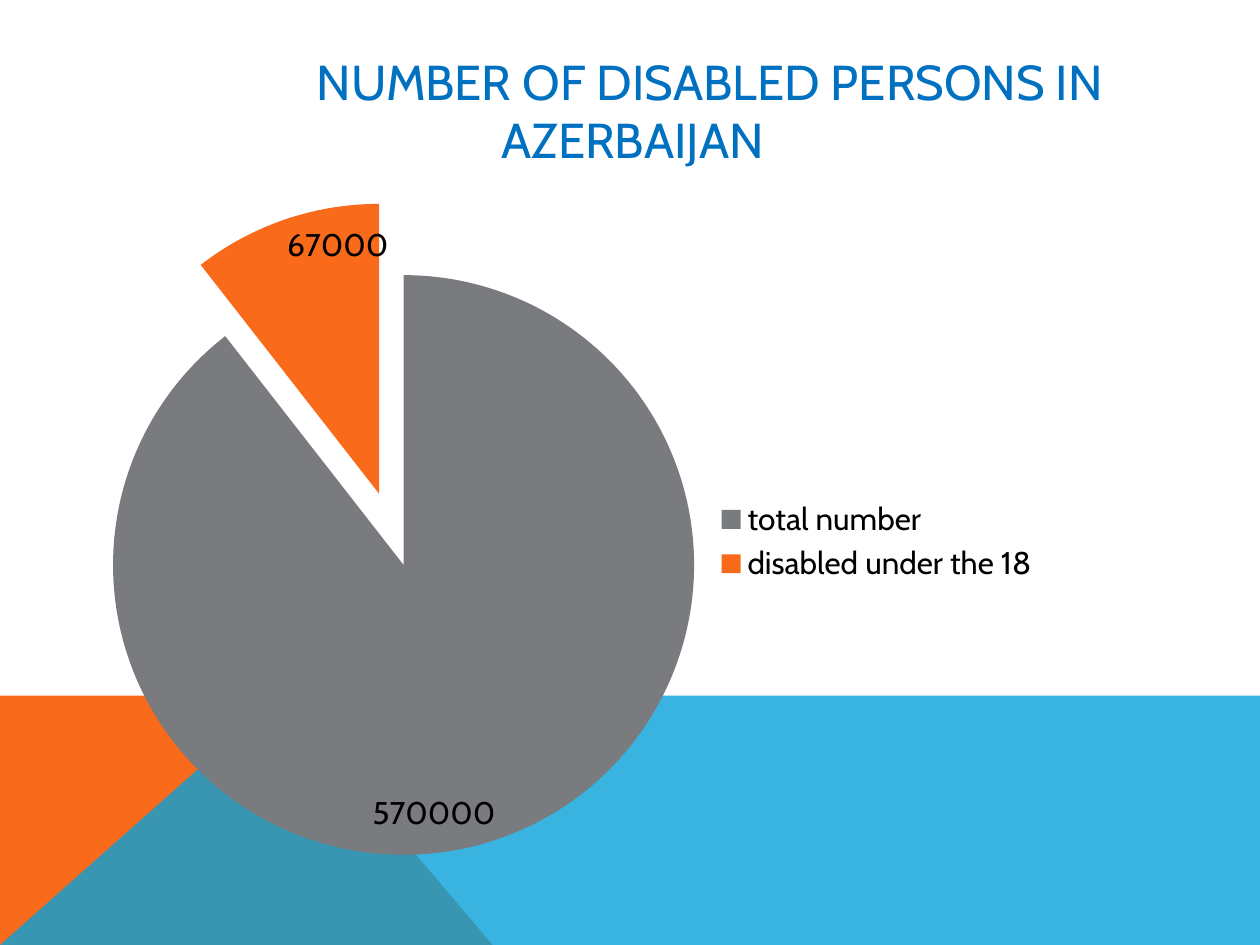
from dataclasses import dataclass

from lxml import etree
from pptx import Presentation
from pptx.chart.data import CategoryChartData
from pptx.dml.color import RGBColor
from pptx.enum.chart import XL_CHART_TYPE, XL_LABEL_POSITION, XL_LEGEND_POSITION
from pptx.enum.text import MSO_ANCHOR, PP_ALIGN
from pptx.oxml.ns import qn
from pptx.util import Pt

PIE = XL_CHART_TYPE.PIE
INSIDE_END = XL_LABEL_POSITION.INSIDE_END
RIGHT = XL_LEGEND_POSITION.RIGHT
CENTER = PP_ALIGN.CENTER
MIDDLE = MSO_ANCHOR.MIDDLE

ORANGE = RGBColor(0xF9, 0x6A, 0x1B)
SKY = RGBColor(0x08, 0xA1, 0xD9)
GREY = RGBColor(0x79, 0x7B, 0x7E)
BLUE = RGBColor(0x00, 0x70, 0xC0)
BLACK = RGBColor(0, 0, 0)

FONT = "Cabin"
PAGE_WIDTH, PAGE_HEIGHT = 720, 540
BAND_TOP = 397.5
PEAK = 160.5
TITLE_INDENT = 88
PLOT_LAYOUT = {"x": 0.03, "y": 0.1, "w": 0.6, "h": 0.87}


@dataclass(frozen=True)
class Band:
    points: tuple[tuple[float, float], ...]
    color: RGBColor
    opacity: int = 100


@dataclass(frozen=True)
class Slice:
    label: str
    value: int
    color: RGBColor
    explosion: int = 0


BANDS = (
    Band(((0, PAGE_HEIGHT), (0, BAND_TOP), (PEAK, BAND_TOP), (281.5, PAGE_HEIGHT)), ORANGE),
    Band(
        ((0, PAGE_HEIGHT), (PEAK, BAND_TOP), (PAGE_WIDTH, BAND_TOP), (PAGE_WIDTH, PAGE_HEIGHT)),
        SKY,
        80,
    ),
)
SLICES = (
    Slice("total number", 570000, GREY),
    Slice("disabled under the 18", 67000, ORANGE, 26),
)


def apply_format(target, values: dict) -> None:
    for name, value in values.items():
        setattr(target, name, value)


def draw_band(page, band: Band) -> None:
    points = [(Pt(x), Pt(y)) for x, y in band.points]
    builder = page.shapes.build_freeform(*points[0], scale=1.0)
    builder.add_line_segments(points[1:], close=True)
    shape = builder.convert_to_shape()
    shape.shadow.inherit = False
    shape.fill.solid()
    shape.fill.fore_color.rgb = band.color
    shape.line.fill.background()
    if band.opacity < 100:
        color = shape.fill._xPr.find(f".//{qn('a:srgbClr')}")
        etree.SubElement(color, qn("a:alpha"), val=str(band.opacity * 1000))


def draw_title(page, text: str) -> None:
    box = page.shapes.add_textbox(Pt(65.5), Pt(26), Pt(592), Pt(73.5))
    apply_format(box.text_frame, {"word_wrap": True, "vertical_anchor": MIDDLE})
    para = box.text_frame.paragraphs[0]
    para.alignment = CENTER
    para._p.get_or_add_pPr().set("indent", str(Pt(TITLE_INDENT)))
    span = para.add_run()
    span.text = text
    apply_format(span.font, {"name": FONT, "size": Pt(28)})
    span.font.color.rgb = BLUE


def place_plot(plot_area) -> None:
    for old in plot_area.findall(qn("c:layout")):
        plot_area.remove(old)
    layout = etree.Element(qn("c:layout"))
    plot_area.insert(0, layout)
    manual = etree.SubElement(layout, qn("c:manualLayout"))
    settings = {"layoutTarget": "inner", "xMode": "edge", "yMode": "edge", **PLOT_LAYOUT}
    for name, value in settings.items():
        etree.SubElement(manual, qn(f"c:{name}"), val=str(value))


def draw_pie(page, slices: tuple[Slice, ...]) -> None:
    data = CategoryChartData()
    data.categories = [item.label for item in slices]
    data.add_series("Series 1", [item.value for item in slices])
    frame = page.shapes.add_chart(PIE, Pt(48), Pt(116.5), Pt(553.5), Pt(385), data)
    chart = frame.chart
    apply_format(chart, {"has_title": False, "has_legend": True})
    apply_format(chart.font, {"name": FONT, "size": Pt(18)})
    chart.font.color.rgb = BLACK
    apply_format(chart.legend, {"position": RIGHT, "include_in_layout": False})

    plot = chart.plots[0]
    apply_format(plot, {"vary_by_categories": True, "has_data_labels": True})
    labels = {"show_value": True, "show_percentage": False, "position": INSIDE_END}
    apply_format(plot.data_labels, labels)
    for index, item in enumerate(slices):
        point = plot.series[0].points[index]
        point.format.fill.solid()
        point.format.fill.fore_color.rgb = item.color
        if item.explosion:
            properties = point.format._element.find(qn("c:spPr")) if hasattr(
                point.format, "_element"
            ) else point.format.fill._xPr
            explosion = etree.Element(qn("c:explosion"), val=str(item.explosion))
            properties.addprevious(explosion)
    place_plot(chart._chartSpace.chart.plotArea)


def main() -> None:
    deck = Presentation()
    apply_format(deck, {"slide_width": Pt(PAGE_WIDTH), "slide_height": Pt(PAGE_HEIGHT)})
    page = deck.slides.add_slide(deck.slide_layouts[6])
    for band in BANDS:
        draw_band(page, band)
    draw_title(page, "NUMBER OF DISABLED PERSONS IN AZERBAIJAN")
    draw_pie(page, SLICES)
    deck.save("out.pptx")


if __name__ == "__main__":
    main()
